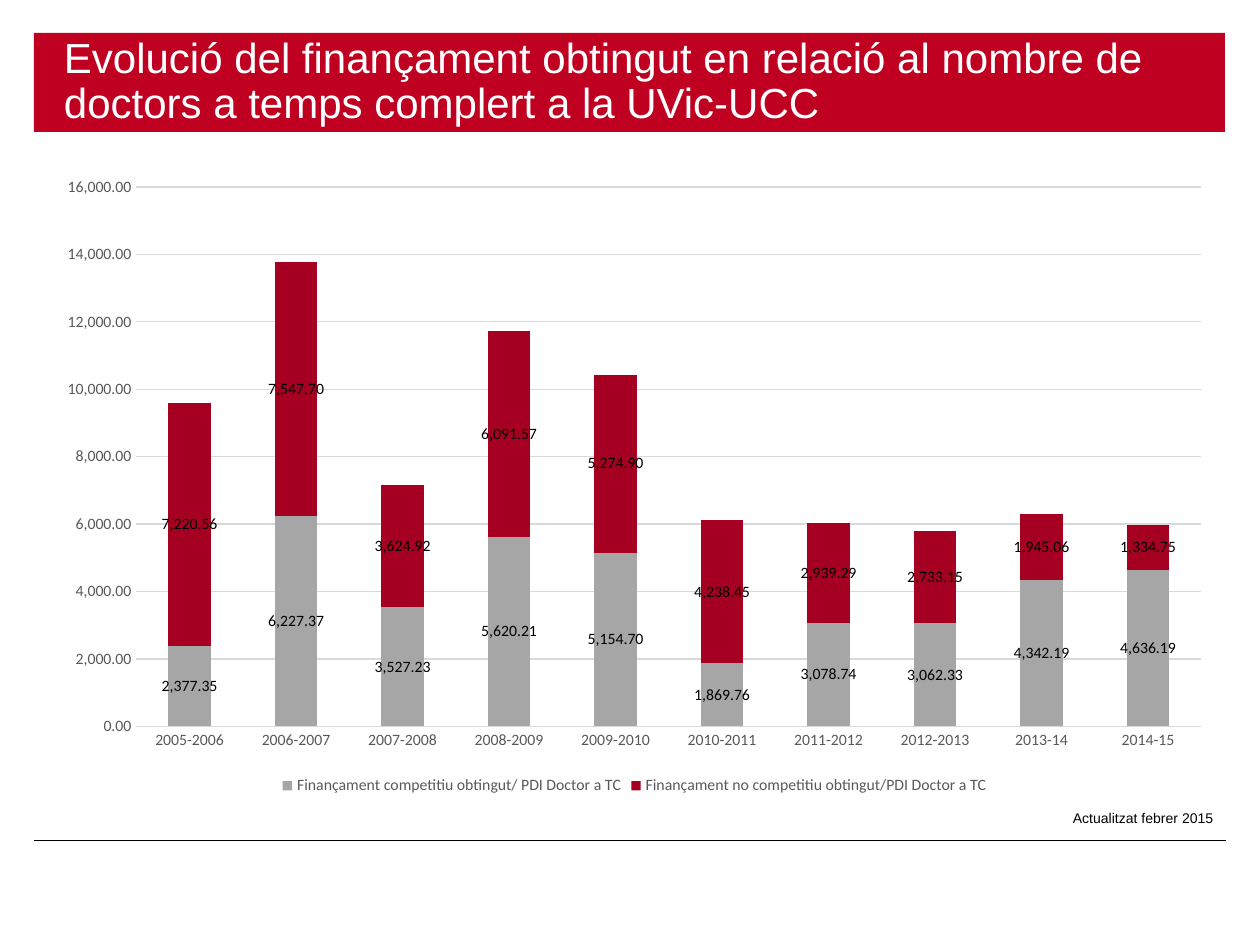
from pptx import Presentation
from pptx.chart.data import CategoryChartData
from pptx.dml.color import RGBColor
from pptx.enum.chart import XL_CHART_TYPE as CT, XL_LEGEND_POSITION as LP, XL_TICK_MARK as TM
from pptx.enum.shapes import MSO_CONNECTOR, MSO_SHAPE
from pptx.enum.text import MSO_ANCHOR, PP_ALIGN
from pptx.oxml.ns import qn
from pptx.util import Emu, Pt
from lxml.etree import SubElement

# Content
TITLE = ("Evolució del finançament obtingut en relació al nombre de "
         "doctors a temps complert a la UVic-UCC")
UPDATED = "Actualitzat febrer 2015"
YEARS = ["2005-2006", "2006-2007", "2007-2008", "2008-2009", "2009-2010",
         "2010-2011", "2011-2012", "2012-2013", "2013-14", "2014-15"]

RED = RGBColor(0xC0, 0x00, 0x21)
DARK_RED = RGBColor(0xA5, 0x00, 0x21)
GREY = RGBColor(0xA6, 0xA6, 0xA6)
LIGHT = RGBColor(0xD9, 0xD9, 0xD9)
TEXT_GREY = RGBColor(0x59, 0x59, 0x59)
BLACK = RGBColor(0, 0, 0)
WHITE = RGBColor(0xFF, 0xFF, 0xFF)

FUNDING = [
    ("Finançament competitiu obtingut/ PDI Doctor a TC", GREY,
     [2377.35, 6227.37, 3527.23, 5620.21, 5154.70,
      1869.76, 3078.74, 3062.33, 4342.19, 4636.19]),
    ("Finançament no competitiu obtingut/PDI Doctor a TC", DARK_RED,
     [7220.56, 7547.70, 3624.92, 6091.57, 5274.90,
      4238.45, 2939.29, 2733.15, 1945.06, 1334.75]),
]
NUMBER_FORMAT = "#,##0.00"


def px(n):
    return Emu(n * 914400 // 126)


def set_font(font, name, size, color):
    font.name, font.size = name, Pt(size)
    font.color.rgb = color


def set_line(line, color, width):
    line.color.rgb = color
    line.width = Pt(width)


prs = Presentation()
prs.slide_width, prs.slide_height = px(1260), px(945)
slide = prs.slides.add_slide(prs.slide_layouts[6])
shapes = slide.shapes

# Footer rule
rule = shapes.add_connector(MSO_CONNECTOR.STRAIGHT, px(34), px(840), px(1226), px(840))
set_line(rule.line, BLACK, 0.5)
SubElement(rule._element.spPr, qn("a:effectLst"))

# Title band
band = shapes.add_shape(MSO_SHAPE.RECTANGLE, px(34), px(33), px(1191), px(99))
band.shadow.inherit = False
band.fill.solid()
band.fill.fore_color.rgb = RED
band.line.fill.background()
tf = band.text_frame
tf.word_wrap = True
tf.vertical_anchor = MSO_ANCHOR.MIDDLE
tf.margin_left = px(30)
tf.text = TITLE
p = tf.paragraphs[0]
p.alignment = PP_ALIGN.LEFT
p.line_spacing = 0.9
set_font(p.runs[0].font, "Arial", 24, WHITE)

# Update note
note = shapes.add_textbox(px(1047), px(803), px(179), px(30))
tf = note.text_frame
tf.word_wrap = True
tf.text = UPDATED
p = tf.paragraphs[0]
p.alignment = PP_ALIGN.RIGHT
set_font(p.runs[0].font, "Arial", 8, BLACK)

# Stacked column chart
data = CategoryChartData(number_format=NUMBER_FORMAT)
data.categories = YEARS
for name, _, values in FUNDING:
    data.add_series(name, values)
chart = shapes.add_chart(CT.COLUMN_STACKED, px(44), px(165), px(1181), px(635), data).chart
chart.has_title = False
set_font(chart.font, "Calibri", 10, BLACK)

plot = chart.plots[0]
plot.gap_width, plot.overlap = 150, 100
plot.vary_by_categories = False
for series, (_, color, _) in zip(plot.series, FUNDING):
    series.format.fill.solid()
    series.format.fill.fore_color.rgb = color
    labels = series.data_labels
    labels.show_value = True
    labels.number_format = NUMBER_FORMAT
    labels.number_format_is_linked = False
    set_font(labels.font, "Calibri", 9, BLACK)

# Axes and legend
years, amounts = chart.category_axis, chart.value_axis
for axis in (years, amounts):
    axis.major_tick_mark = axis.minor_tick_mark = TM.NONE
    set_font(axis.tick_labels.font, "Calibri", 9, TEXT_GREY)
set_line(years.format.line, LIGHT, 0.75)
amounts.format.line.fill.background()
amounts.has_major_gridlines = True
set_line(amounts.major_gridlines.format.line, LIGHT, 0.75)
amounts.tick_labels.number_format = NUMBER_FORMAT
amounts.tick_labels.number_format_is_linked = False

chart.has_legend = True
chart.legend.position = LP.BOTTOM
chart.legend.include_in_layout = False
set_font(chart.legend.font, "Calibri", 9, TEXT_GREY)

prs.save("out.pptx")
